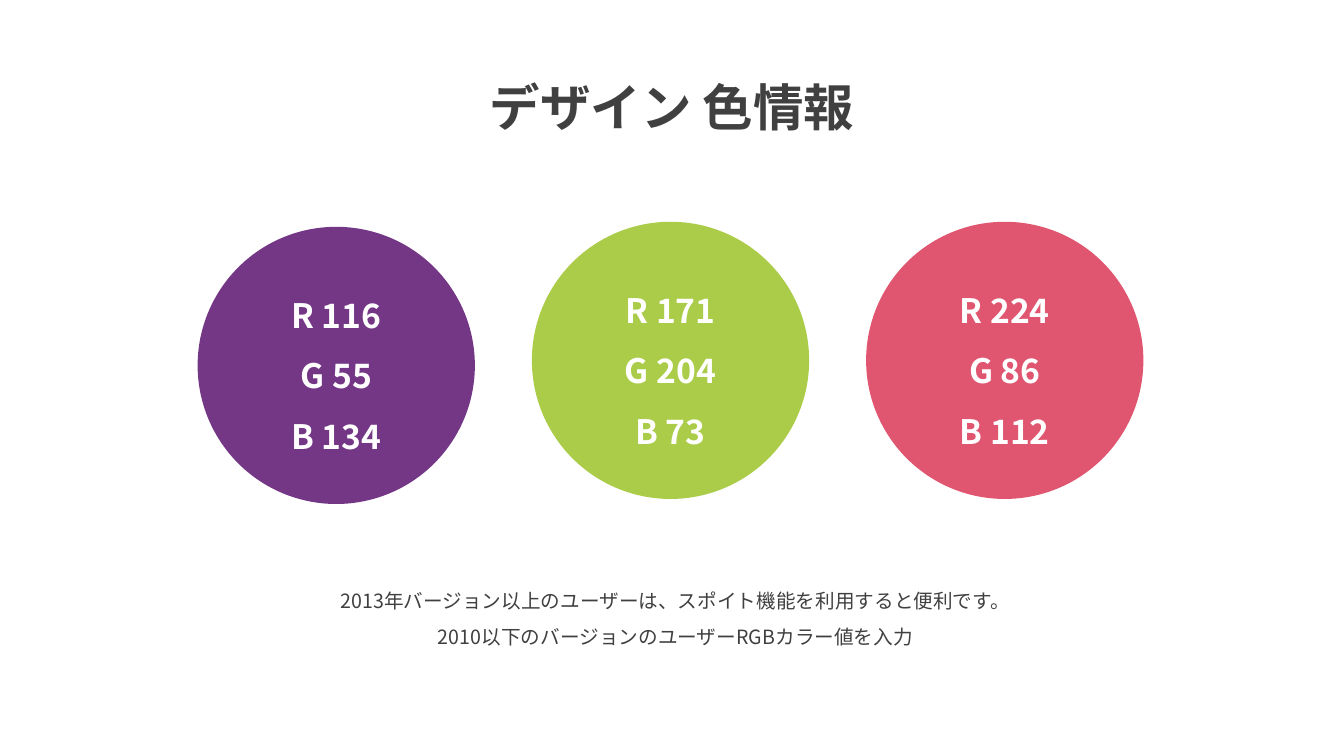
from lxml import etree
from pptx import Presentation
from pptx import util as u
from pptx.dml.color import RGBColor
from pptx.enum import shapes, text
from pptx.oxml.ns import qn

FONT = "Noto Sans CJK KR"
COLORS = {
    "purple": "743786",
    "green": "ABCC49",
    "pink": "E05670",
    "ink": "404040",
    "white": "FFFFFF",
}
SWATCHES = [("purple", 0.05), ("green", 0), ("pink", 0)]
NOTES = [
    "2013年バージョン以上のユーザーは、スポイト機能を利用すると便利です。",
    "2010以下のバージョンのユーザーRGBカラー値を入力",
]
WIDTH, HEIGHT = 13.33, 7.5
DIAMETER = 2.75


def write_lines(frame, lines, size, color, bold=False):
    """Fill a text frame with centred lines in one style."""
    frame.word_wrap = True
    frame.text = "\n".join(lines)
    for paragraph in frame.paragraphs:
        paragraph.alignment = text.PP_ALIGN.CENTER
        paragraph.line_spacing = 1.5
        font = paragraph.font
        font.name, font.size, font.bold = FONT, u.Pt(size), bold
        font.color.rgb = RGBColor.from_string(COLORS[color])
        properties = paragraph._p.find(".//" + qn("a:defRPr"))
        etree.SubElement(properties, qn("a:ea"), typeface=FONT)


def add_title(slide, left, top, width, height):
    """Place the slide title in the given box."""
    title = slide.shapes.title
    title.left, title.top = u.Inches(left), u.Inches(top)
    title.width, title.height = u.Inches(width), u.Inches(height)
    frame = title.text_frame
    write_lines(frame, ["デザイン 色情報"], 36, "ink", bold=True)
    frame.vertical_anchor = text.MSO_ANCHOR.TOP
    frame.auto_size = text.MSO_AUTO_SIZE.SHAPE_TO_FIT_TEXT


def add_swatches(slide, left, top, width):
    """Spread the colour circles evenly, each labelled with its RGB values."""
    pitch = (width - DIAMETER) / (len(SWATCHES) - 1)
    for column, (name, drop) in enumerate(SWATCHES):
        circle = slide.shapes.add_shape(
            shapes.MSO_SHAPE.OVAL,
            u.Inches(left + column * pitch), u.Inches(top + drop),
            u.Inches(DIAMETER), u.Inches(DIAMETER))
        color = RGBColor.from_string(COLORS[name])
        circle.shadow.inherit = False
        circle.fill.solid()
        circle.fill.fore_color.rgb = color
        circle.line.fill.background()
        lines = [f"{channel} {value}" for channel, value in zip("RGB", color)]
        write_lines(circle.text_frame, lines, 24, "white", bold=True)
        circle.text_frame.vertical_anchor = text.MSO_ANCHOR.MIDDLE


def add_notes(slide, left, top, width, height):
    """Place the usage hints in the given box."""
    box = slide.shapes.add_textbox(
        u.Inches(left), u.Inches(top), u.Inches(width), u.Inches(height))
    write_lines(box.text_frame, NOTES, 14, "ink")
    box.text_frame.auto_size = text.MSO_AUTO_SIZE.SHAPE_TO_FIT_TEXT


def main():
    """Build the colour information slide."""
    presentation = Presentation()
    presentation.slide_width = u.Inches(WIDTH)
    presentation.slide_height = u.Inches(HEIGHT)
    slide = presentation.slides.add_slide(presentation.slide_layouts[5])
    add_title(slide, (WIDTH - 4.85) / 2, 0.4, 4.85, 0.91)
    add_swatches(slide, 1.96, 2.2, 9.38)
    add_notes(slide, 2.52, 5.68, 8.36, 0.77)
    presentation.save("out.pptx")


if __name__ == "__main__":
    main()
